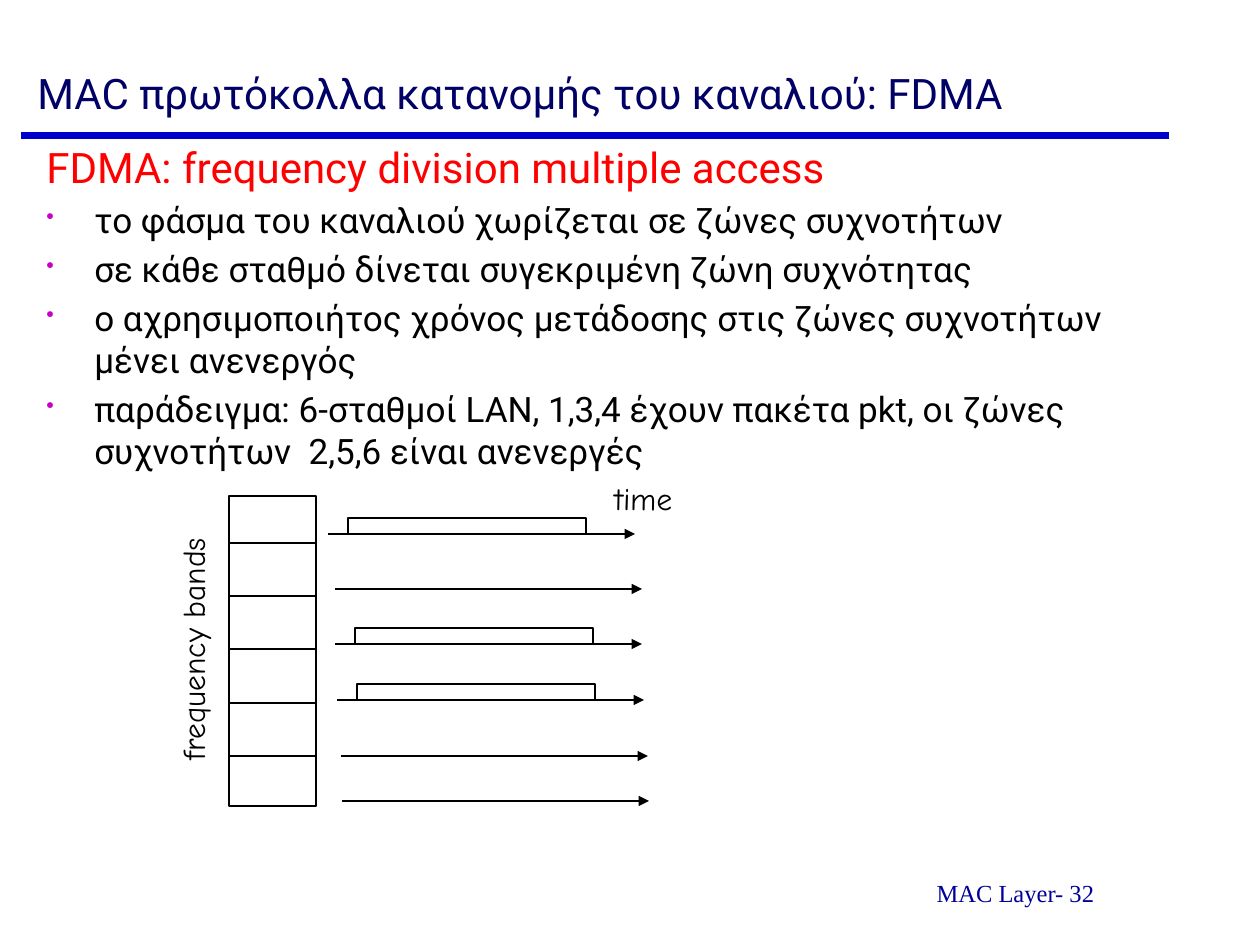
from lxml import etree
from pptx import Presentation
from pptx import util as u
from pptx.dml.color import RGBColor
from pptx.enum import shapes, text
from pptx.oxml.ns import qn

EMU_PER_PX = 914400 / 126

BLACK = RGBColor(0x00, 0x00, 0x00)
WHITE = RGBColor(0xFF, 0xFF, 0xFF)
RED = RGBColor(0xFF, 0x00, 0x00)
RULE_BLUE = RGBColor(0x00, 0x00, 0xCC)
TITLE_NAVY = RGBColor(0x00, 0x00, 0x66)
FOOTER_BLUE = RGBColor(0x00, 0x00, 0x99)
BULLET_MAGENTA = "C700C7"

BODY_FONT = "Roboto"
LABEL_FONT = "Comic Neue"
FOOTER_FONT = "Times New Roman"


def px(length):
    return u.Emu(round(length * EMU_PER_PX))


class SlideBuilder:
    def __init__(self, slide, line_width=1.5):
        self.slide = slide
        self.line_width = line_width

    def text_box(self, left, top, width, height, wrap=True,
                 anchor=text.MSO_ANCHOR.TOP, rotation=0):
        shape = self.slide.shapes.add_textbox(px(left), px(top), px(width), px(height))
        shape.rotation = rotation
        shape.text_frame.word_wrap = wrap
        shape.text_frame.vertical_anchor = anchor
        return shape.text_frame

    def run(self, paragraph, words, size, font, color):
        run = paragraph.add_run()
        run.text = words
        run.font.size = u.Pt(size)
        run.font.name = font
        run.font.color.rgb = color

    def hanging(self, paragraph, indent, space, bullet=None):
        paragraph.space_before = u.Pt(space)
        properties = paragraph._p.get_or_add_pPr()
        properties.set("marL", str(px(indent)))
        properties.set("indent", str(-px(indent)))
        if bullet:
            color = etree.SubElement(properties, qn("a:buClr"))
            etree.SubElement(color, qn("a:srgbClr"), val=BULLET_MAGENTA)
            etree.SubElement(properties, qn("a:buSzPct"), val="64000")
            etree.SubElement(properties, qn("a:buChar"), char=bullet)

    def stroke(self, shape, color=BLACK, width=None):
        shape.line.color.rgb = color
        shape.line.width = u.Pt(width or self.line_width)

    def line(self, x1, y1, x2, y2, color=BLACK, width=None, arrow=False):
        connector = self.slide.shapes.add_connector(
            shapes.MSO_CONNECTOR.STRAIGHT, px(x1), px(y1), px(x2), px(y2))
        self.stroke(connector, color, width)
        etree.SubElement(connector._element.spPr, qn("a:effectLst"))
        if arrow:
            etree.SubElement(connector.line._get_or_add_ln(), qn("a:tailEnd"),
                             type="triangle")

    def rectangle(self, left, top, width, height):
        shape = self.slide.shapes.add_shape(
            shapes.MSO_SHAPE.RECTANGLE, px(left), px(top), px(width), px(height))
        shape.shadow.inherit = False
        shape.fill.solid()
        shape.fill.fore_color.rgb = WHITE
        self.stroke(shape)

    def packet(self, left, base, width, height):
        right, top = left + width, base - height
        builder = self.slide.shapes.build_freeform(left, base, scale=EMU_PER_PX)
        builder.add_line_segments([(left, top), (right, top), (right, base)], close=False)
        shape = builder.convert_to_shape()
        shape.shadow.inherit = False
        shape.fill.background()
        self.stroke(shape)


def main():
    presentation = Presentation()
    presentation.slide_width = px(1260)
    presentation.slide_height = px(945)
    slide = presentation.slides.add_slide(presentation.slide_layouts[6])
    draw = SlideBuilder(slide)

    # Rule and footer
    draw.line(21, 136, 1169, 136, RULE_BLUE, 4)
    footer = draw.text_box(808, 872, 421, 42).paragraphs[0]
    footer.alignment = text.PP_ALIGN.CENTER
    draw.run(footer, "MAC Layer- 32 ", 14, FOOTER_FONT, FOOTER_BLUE)

    # Title
    title = draw.text_box(25, -34, 1189, 158, anchor=text.MSO_ANCHOR.BOTTOM)
    draw.run(title.paragraphs[0], "MAC πρωτόκολλα κατανομής του καναλιού: FDMA",
             24, BODY_FONT, TITLE_NAVY)

    # Heading and bullets
    body = draw.text_box(34, 135, 1133, 640)
    heading = body.paragraphs[0]
    draw.hanging(heading, 48, 4.8)
    draw.run(heading, "FDMA: frequency division multiple access", 24, BODY_FONT, RED)
    for words in (
        "το φάσμα του καναλιού χωρίζεται σε ζώνες συχνοτήτων",
        "σε κάθε σταθμό δίνεται συγεκριμένη ζώνη συχνότητας",
        "ο αχρησιμοποιήτος χρόνος μετάδοσης στις ζώνες συχνοτήτων μένει ανενεργός",
        "παράδειγμα: 6-σταθμοί LAN, 1,3,4 έχουν πακέτα pkt, "
        "οι ζώνες συχνοτήτων  2,5,6 είναι ανενεργές",
    ):
        paragraph = body.add_paragraph()
        draw.hanging(paragraph, 48, 4, "•")
        draw.run(paragraph, words, 20, BODY_FONT, BLACK)

    # Frequency bands
    draw.rectangle(229, 496, 87, 310)
    for y in (543, 596, 649, 703, 756):
        draw.line(229, y, 316, y)

    # Time axes, with a packet on the bands in use
    for x, y, busy in (
        (328, 534, True), (335, 589, False), (335, 644, True),
        (337, 700, True), (341, 756, False), (342, 801, False),
    ):
        draw.line(x, y, x + 307, y, arrow=True)
        if busy:
            draw.packet(x + 20, y, 238, 16)

    # Labels
    for words, place, rotation in (
        ("frequency bands", (59, 614, 267, 50), 270),
        ("time", (602, 473, 91, 50), 1.1),
    ):
        label = draw.text_box(*place, wrap=False, rotation=rotation)
        draw.run(label.paragraphs[0], words, 18, LABEL_FONT, BLACK)

    presentation.save("out.pptx")


if __name__ == "__main__":
    main()
